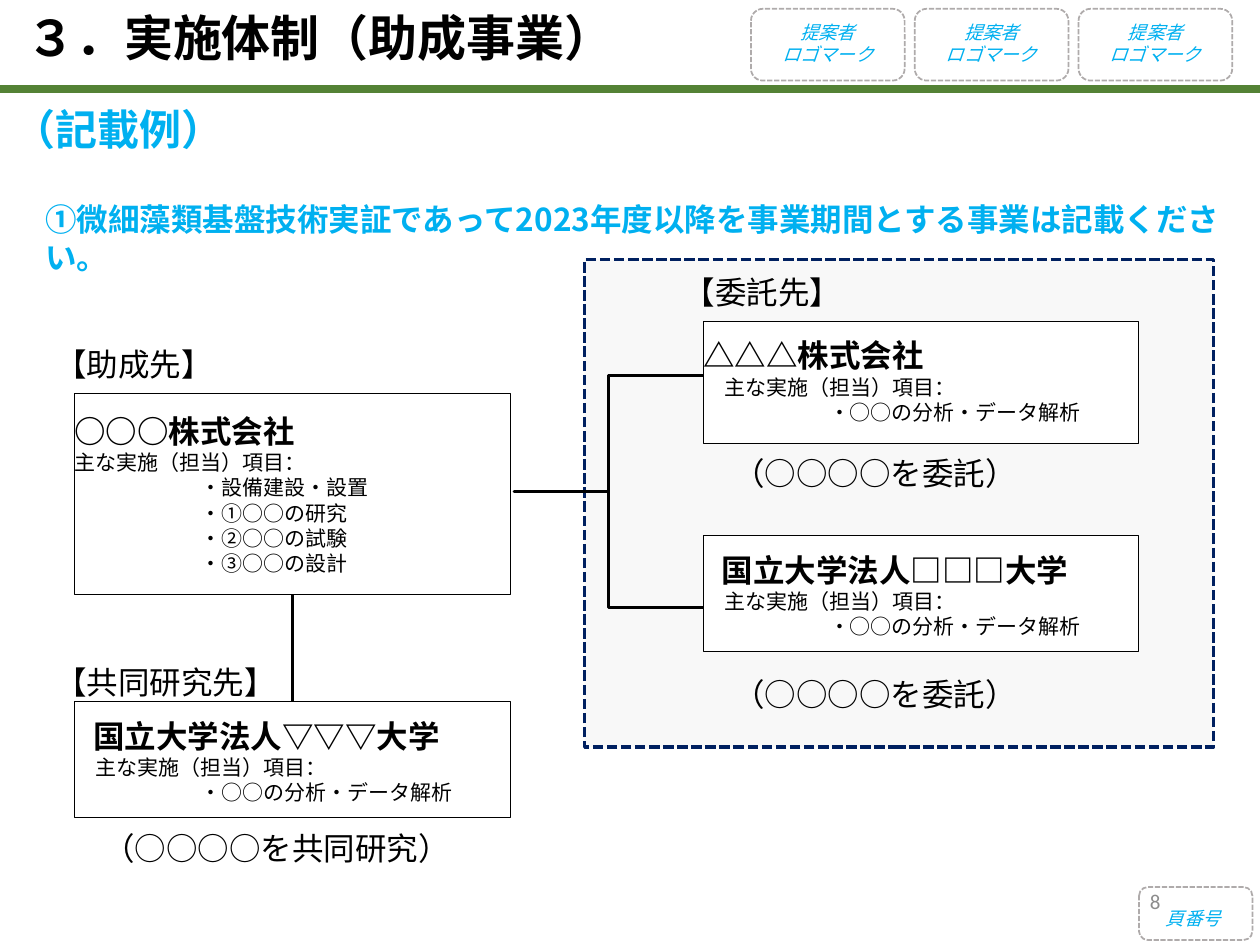
from lxml import etree
from pptx import Presentation
from pptx.dml.color import RGBColor
from pptx.enum.dml import MSO_LINE
from pptx.enum.shapes import MSO_CONNECTOR, MSO_SHAPE
from pptx.enum.text import MSO_ANCHOR, MSO_AUTO_SIZE, PP_ALIGN
from pptx.oxml.ns import qn
from pptx.util import Inches, Pt

COLORS = {"black": "000000", "white": "FFFFFF", "blue": "00B0F0", "navy": "002060",
          "green": "548235", "gray": "AFABAB", "panel": "F2F2F2", "number": "8C8C8C"}
FONT = "Noto Sans CJK JP"
STANDARD_INSETS = (0.1, 0.05, 0.1, 0.05)
NO_INSETS = (0, 0, 0, 0)

deck = Presentation()
deck.slide_width, deck.slide_height = Inches(10), Inches(7.5)
page = deck.slides.add_slide(deck.slide_layouts[6])


def write(lines, at=None, shape=None, size=18, color="black", font=FONT, bold=False,
          italic=False, align=PP_ALIGN.LEFT, anchor=MSO_ANCHOR.TOP,
          insets=STANDARD_INSETS, wrap=True, grow=False):
    """Fill a shape, or a new text box; a line is a text or (text, overrides)."""
    box = shape or page.shapes.add_textbox(*map(Inches, at))
    frame = box.text_frame
    frame.word_wrap = wrap
    frame.auto_size = MSO_AUTO_SIZE.SHAPE_TO_FIT_TEXT if grow else MSO_AUTO_SIZE.NONE
    frame.vertical_anchor = anchor
    (frame.margin_left, frame.margin_top,
     frame.margin_right, frame.margin_bottom) = map(Inches, insets)
    for index, line in enumerate(lines):
        text, own = (line, {}) if isinstance(line, str) else line
        para = frame.paragraphs[0] if index == 0 else frame.add_paragraph()
        para.alignment = align
        properties = para._p.get_or_add_pPr()
        properties.set("marL", str(Inches(own.get("margin", 0))))
        properties.set("indent", str(Inches(own.get("indent", 0))))
        span = para.add_run()
        span.text = text
        span.font.name = font
        span.font.size = Pt(own.get("size", size))
        span.font.bold = own.get("bold", bold)
        span.font.italic = italic
        span.font.color.rgb = RGBColor.from_string(COLORS[color])
        etree.SubElement(span._r.rPr, qn("a:ea"), typeface=font)


def draw(kind, at, line, width, fill=None, dashed=False):
    shape = page.shapes.add_shape(kind, *map(Inches, at))
    shape.shadow.inherit = False
    if fill:
        shape.fill.solid()
        shape.fill.fore_color.rgb = RGBColor.from_string(COLORS[fill])
    else:
        shape.fill.background()
    shape.line.color.rgb = RGBColor.from_string(COLORS[line])
    shape.line.width = Pt(width)
    if dashed:
        shape.line.dash_style = MSO_LINE.SQUARE_DOT
    return shape


# Half-transparent panel behind the contractors
panel = draw(MSO_SHAPE.RECTANGLE, (4.64, 2.06, 4.99, 3.87), "navy", 2, "panel", dashed=True)
panel_color = panel.fill._xPr.find(qn("a:solidFill"))[0]
etree.SubElement(panel_color, qn("a:alpha"), val="50000")

# Header, page number and dashed placeholders
write(["8"], (7.06, 6.95, 2.25, 0.4), size=12, color="number", font="Calibri",
      align=PP_ALIGN.RIGHT, anchor=MSO_ANCHOR.MIDDLE)
write(["３．実施体制（助成事業）"], (0.11, 0.01, 4.91, 0.57), size=28, bold=True,
      wrap=False, grow=True)
tag_format = dict(size=10.5, color="blue", italic=True, align=PP_ALIGN.CENTER,
                  wrap=False, grow=True)
for column in range(3):
    left = 5.96 + 1.3 * column
    draw(MSO_SHAPE.ROUNDED_RECTANGLE, (left, 0.07, 1.22, 0.57), "gray", 1, dashed=True)
    write(["提案者", "ロゴマーク"], (left + 0.14, 0.12, 0.94, 0.45), **tag_format)
draw(MSO_SHAPE.ROUNDED_RECTANGLE, (9.04, 7.04, 0.9, 0.42), "gray", 1, dashed=True)
write(["頁番号"], (9.15, 7.15, 0.64, 0.28), **tag_format)
write(["（記載例）"], (0.11, 0.82, 5.85, 0.4), size=24, color="blue", bold=True,
      insets=NO_INSETS, grow=True)
write(["①微細藻類基盤技術実証であって2023年度以降を事業期間とする事業は記載ください。"],
      (0.36, 1.59, 9.42, 0.61), color="blue", bold=True, insets=NO_INSETS, grow=True)

# Links: header rule, joint research line, bracket to the contractors
for start, end, color, width in [
    ((0, 0.71), (10, 0.71), "green", 4.5),
    ((2.32, 4.72), (2.32, 5.57), "black", 1.5),
]:
    link = page.shapes.add_connector(MSO_CONNECTOR.STRAIGHT, *map(Inches, start + end))
    link.line.color.rgb = RGBColor.from_string(COLORS[color])
    link.line.width = Pt(width)
    etree.SubElement(link._element.spPr, qn("a:effectLst"))
bracket = draw(MSO_SHAPE.LEFT_BRACE, (4.08, 2.98, 1.5, 1.84), "black", 1.5)
bracket.adjustments[0], bracket.adjustments[1] = 0, 0.5

# Organisation cards: place, name, name indent, role indent, tasks, anchor, inset
analysis = ["・○○の分析・データ解析"]
main_tasks = ["・設備建設・設置", "・①○○の研究", "・②○○の試験", "・③○○の設計"]
TOP, MIDDLE = MSO_ANCHOR.TOP, MSO_ANCHOR.MIDDLE
cards = [
    ((0.59, 3.12, 3.46, 1.6), "○○○株式会社", 0, 0, main_tasks, MIDDLE, 0.16),
    ((5.58, 2.55, 3.46, 0.97), "△△△株式会社", 0, 0.17, analysis, TOP, 0.12),
    ((5.58, 4.25, 3.46, 0.92), "国立大学法人□□□大学", 0.15, 0.17, analysis, TOP, 0.12),
    ((0.59, 5.57, 3.46, 0.92), "国立大学法人▽▽▽大学", 0.15, 0.17, analysis, TOP, 0.12),
]
for at, name, name_indent, role_indent, tasks, anchor, inset in cards:
    card = draw(MSO_SHAPE.RECTANGLE, at, "black", 0.5, "white")
    lines = [(name, dict(size=18, bold=True, indent=name_indent)),
             ("主な実施（担当）項目：", dict(indent=role_indent))]
    lines += [(task, dict(margin=1)) for task in tasks]
    write(lines, shape=card, size=12, anchor=anchor, insets=(0, inset, 0, inset))

# Captions above and below the cards
for text, left, top in [("【助成先】", 0.34, 2.69), ("【委託先】", 5.33, 2.12),
                        ("【共同研究先】", 0.34, 5.21)]:
    write([text], (left, top, 2.13, 0.39))
for text, left, top, width in [("（○○○○を委託）", 5.82, 3.6, 2.75),
                               ("（○○○○を委託）", 5.82, 5.36, 2.75),
                               ("（○○○○を共同研究）", 0.82, 6.58, 3.3)]:
    write([text], (left, top, width, 0.36), insets=NO_INSETS)

deck.save("out.pptx")
